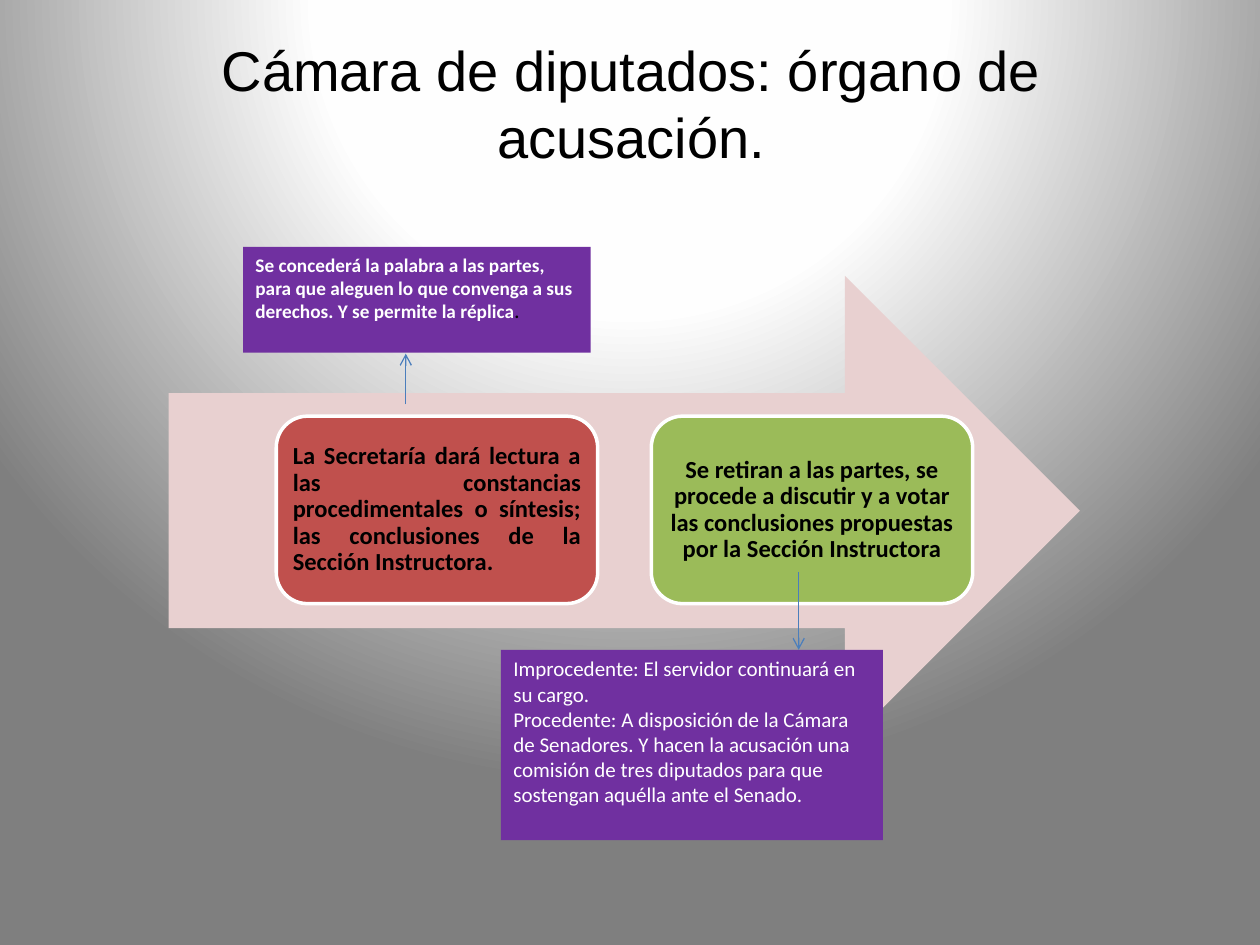
import dataclasses
import pptx
import pptx.dml.color
import pptx.enum.shapes
import pptx.enum.text
import pptx.oxml
import pptx.oxml.ns
import pptx.util
from pptx.util import Cm

Kind = pptx.enum.shapes.MSO_SHAPE
Align = pptx.enum.text.PP_ALIGN
Anchor = pptx.enum.text.MSO_ANCHOR

BACK = f"""<p:bg {pptx.oxml.ns.nsdecls("p", "a")}><p:bgPr>
<a:gradFill rotWithShape="1"><a:gsLst>
<a:gs pos="0"><a:srgbClr val="FFFFFF"/></a:gs>
<a:gs pos="40000"><a:srgbClr val="FEFEFE"/></a:gs>
<a:gs pos="100000"><a:srgbClr val="7F7F7F"/></a:gs>
</a:gsLst><a:path path="circle">
<a:fillToRect l="50000" t="-80000" r="50000" b="180000"/>
</a:path></a:gradFill><a:effectLst/></p:bgPr></p:bg>"""


@dataclasses.dataclass
class Box:
    left: float
    top: float
    width: float
    height: float
    fill: str
    lines: tuple = ()
    size: float = 12
    bold: bool = False
    ink: str = "FFFFFF"
    align: Align = Align.LEFT


@dataclasses.dataclass
class Link:
    x: float
    start: float
    end: float


def color(code: str) -> pptx.dml.color.RGBColor:
    return pptx.dml.color.RGBColor.from_string(code)


def style(run, size: float, ink: str, bold: bool = False, face: str = "Calibri"):
    run.font.name = face
    run.font.size = pptx.util.Pt(size)
    run.font.bold = bold
    run.font.color.rgb = color(ink)


def draw_box(slide, box: Box, kind: Kind):
    spot = map(Cm, (box.left, box.top, box.width, box.height))
    shape = slide.shapes.add_shape(kind, *spot)
    shape.shadow.inherit = False
    shape.fill.solid()
    shape.fill.fore_color.rgb = color(box.fill)
    shape.line.fill.background()
    frame = shape.text_frame
    frame.word_wrap = True
    frame.vertical_anchor = Anchor.TOP
    frame.text = "\n".join(box.lines)
    for para in frame.paragraphs:
        para.alignment = box.align
        for run in para.runs:
            style(run, box.size, box.ink, box.bold)
    return shape


def draw_card(slide, box: Box):
    shape = draw_box(slide, box, Kind.ROUNDED_RECTANGLE)
    shape.line.color.rgb = color("FFFFFF")
    shape.line.width = pptx.util.Pt(2)
    frame = shape.text_frame
    frame.vertical_anchor = Anchor.MIDDLE
    frame.margin_left = frame.margin_right = Cm(0.15)
    frame.margin_top = frame.margin_bottom = Cm(0.15)
    frame.paragraphs[0].line_spacing = 0.9


def draw_link(slide, link: Link):
    line = slide.shapes.add_connector(
        pptx.enum.shapes.MSO_CONNECTOR.STRAIGHT,
        Cm(link.x), Cm(link.start), Cm(link.x), Cm(link.end))
    line.line.color.rgb = color("4B7EBC")
    line.line.width = pptx.util.Pt(0.75)
    tail = pptx.oxml.parse_xml(
        f'<a:tailEnd {pptx.oxml.ns.nsdecls("a")} type="arrow"/>')
    line.line._get_or_add_ln().append(tail)
    plain = pptx.oxml.parse_xml(f'<a:effectLst {pptx.oxml.ns.nsdecls("a")}/>')
    line.element.spPr.append(plain)


def draw_title(slide, text: str):
    title = slide.shapes.title
    title.left, title.top = Cm(2.29), Cm(1.02)
    title.width, title.height = Cm(20.88), Cm(2.11)
    frame = title.text_frame
    frame.text = text
    frame.word_wrap = True
    frame.auto_size = pptx.enum.text.MSO_AUTO_SIZE.NONE
    frame.vertical_anchor = Anchor.MIDDLE
    para = frame.paragraphs[0]
    para.alignment = Align.CENTER
    style(para.runs[0], 32, "000000", face="Arial")


ARROW = Box(3.4, 5.56, 18.37, 9.47, "E8D0D0")
CARDS = (
    ("C0504D", Align.JUSTIFY,
     "La Secretaría dará lectura a las constancias procedimentales o síntesis; "
     "las conclusiones de la Sección Instructora."),
    ("9BBB59", Align.CENTER,
     "Se retiran a las partes, se procede a discutir y a votar las conclusiones "
     "propuestas por la Sección Instructora"),
)
PLEA = Box(4.9, 4.98, 7.01, 2.13, "7030A0", (
    "Se concederá la palabra a las partes, para que aleguen lo que convenga a "
    "sus derechos. Y se permite la réplica",), 11, True)
VOTE = Box(10.1, 13.1, 7.7, 3.84, "7030A0", (
    "Improcedente: El servidor continuará en su cargo.",
    "Procedente: A disposición de la Cámara de Senadores. Y hacen la acusación "
    "una comisión de tres diputados para que sostengan aquélla ante el Senado."))
LINKS = (Link(8.18, 8.15, 7.13), Link(16.1, 11.53, 13.1))


def main():
    deck = pptx.Presentation()
    deck.slide_width, deck.slide_height = Cm(25.4), Cm(19.05)
    slide = deck.slides.add_slide(deck.slide_layouts[5])
    slide.element.cSld.insert(0, pptx.oxml.parse_xml(BACK))
    draw_title(slide, "Cámara de diputados: órgano de acusación.")
    draw_box(slide, ARROW, Kind.RIGHT_ARROW)
    for i, (fill, align, text) in enumerate(CARDS):
        draw_card(slide, Box(5.57 + 7.56 * i, 8.39, 6.48, 3.78, fill,
                             (text,), 14, True, "000000", align))
    plea = draw_box(slide, PLEA, Kind.RECTANGLE)
    stop = plea.text_frame.paragraphs[0].add_run()
    stop.text = "."
    style(stop, 10, "000000", True)
    draw_box(slide, VOTE, Kind.RECTANGLE)
    for link in LINKS:
        draw_link(slide, link)
    deck.save("out.pptx")


if __name__ == "__main__":
    main()
